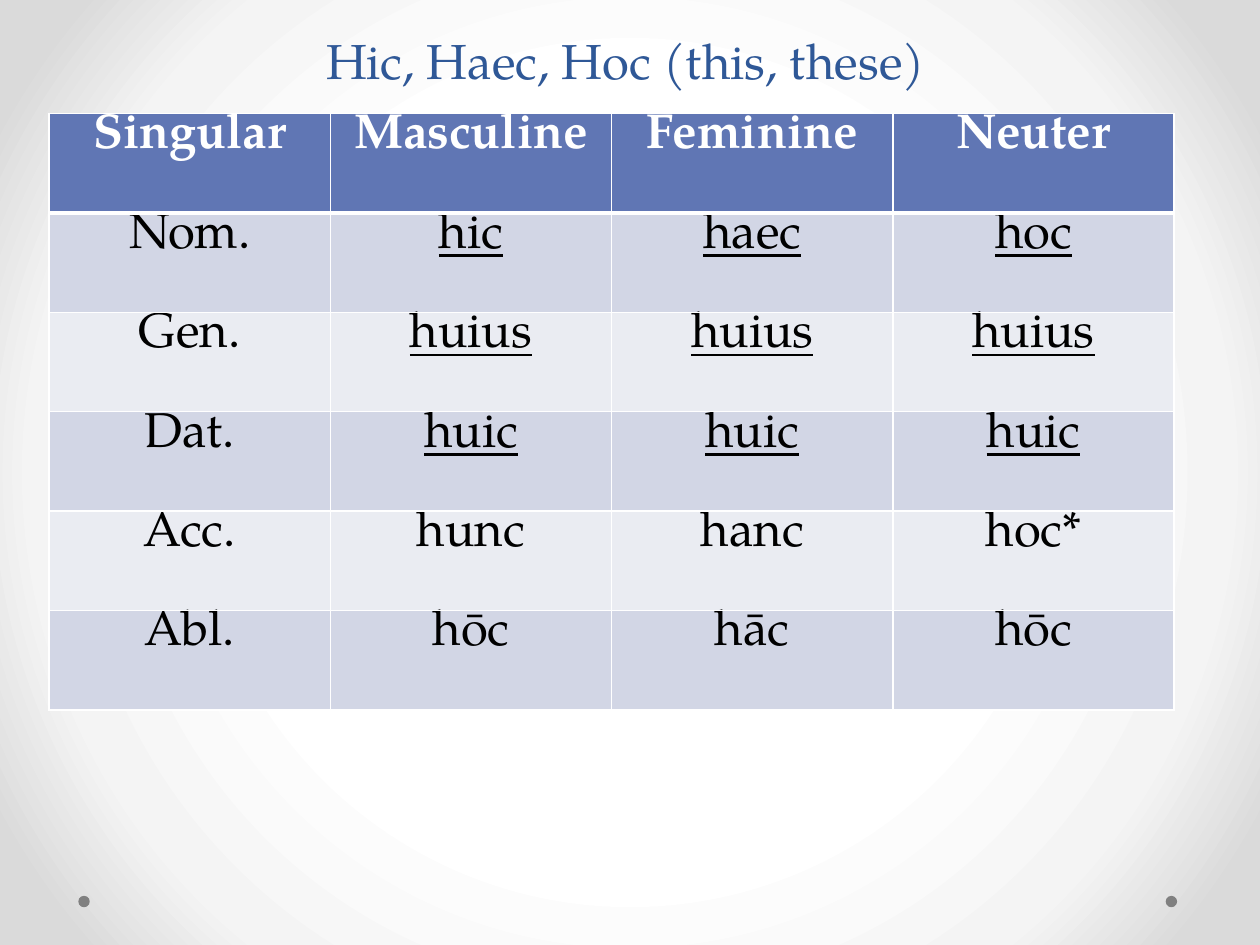
"""Build a slide declining the Latin demonstrative hic, haec, hoc in the singular."""
from lxml.etree import SubElement
from pptx import Presentation
from pptx.dml.color import RGBColor
from pptx.enum.shapes import MSO_SHAPE as Shape
from pptx.enum.text import MSO_ANCHOR as Anchor, PP_ALIGN as Align
from pptx.oxml.ns import qn
from pptx.util import Cm, Pt

FONT = "TeX Gyre Pagella"
TITLE_BLUE = RGBColor(0x2F, 0x58, 0x97)
HEADER_BLUE = RGBColor(0x60, 0x76, 0xB4)
BAND_DARK = RGBColor(0xD2, 0xD6, 0xE5)
BAND_LIGHT = RGBColor(0xEA, 0xEC, 0xF2)
GREY = RGBColor(0x80, 0x80, 0x80)
WHITE = RGBColor(0xFF, 0xFF, 0xFF)
BLACK = RGBColor(0, 0, 0)
BACKDROP = [(50, WHITE), (76, RGBColor(0xF4, 0xF4, 0xF4)), (92, RGBColor(0xDA, 0xDA, 0xDA))]
DECLENSION = [
    ("Singular", "Masculine", "Feminine", "Neuter"),
    ("Nom.", "hic", "haec", "hoc"),
    ("Gen.", "huius", "huius", "huius"),
    ("Dat.", "huic", "huic", "huic"),
    ("Acc.", "hunc", "hanc", "hoc*"),
    ("Abl.", "hōc", "hāc", "hōc"),
]
UNDERLINED_CASES = ("Nom.", "Gen.", "Dat.")


def write(frame, text, color):
    frame.text = text
    line = frame.paragraphs[0]
    line.alignment = Align.CENTER
    line.font.name = FONT
    line.font.size = Pt(28)
    line.font.color.rgb = color
    return line.font


def add_border(cell, side, width):
    border = SubElement(cell._tc.get_or_add_tcPr(), qn(f"a:ln{side}"), w=str(Pt(width)))
    paint = SubElement(border, qn("a:solidFill"))
    SubElement(paint, qn("a:srgbClr"), val=str(WHITE))


deck = Presentation()
deck.slide_width, deck.slide_height = Cm(25.4), Cm(19.05)
slide = deck.slides.add_slide(deck.slide_layouts[6])

backdrop = slide.background.fill
backdrop.gradient()
gradient = slide.background._cSld.find(".//" + qn("a:gradFill"))
for part in list(gradient):
    gradient.remove(part)
stops = SubElement(gradient, qn("a:gsLst"))
for position, color in BACKDROP:
    stop = SubElement(stops, qn("a:gs"), pos=str(position * 1000))
    SubElement(stop, qn("a:srgbClr"), val=str(color))
circle = SubElement(gradient, qn("a:path"), path="circle")
SubElement(circle, qn("a:fillToRect"), l="50000", t="50000", r="50000", b="50000")

for left in (23.5, 1.58):
    dot = slide.shapes.add_shape(Shape.OVAL, Cm(left), Cm(18.06), Cm(0.23), Cm(0.23))
    dot.shadow.inherit = False
    dot.fill.solid()
    dot.fill.fore_color.rgb = GREY
    dot.line.fill.background()

title = slide.shapes.add_textbox(Cm(4.67), Cm(-0.56), Cm(15.88), Cm(2.49)).text_frame
title.word_wrap = True
title.vertical_anchor = Anchor.BOTTOM
write(title, "Hic, Haec, Hoc (this, these)", TITLE_BLUE)

table = slide.shapes.add_table(
    len(DECLENSION), 4, Cm(0.99), Cm(2.29), Cm(22.68), Cm(12.02)).table
for row, forms in enumerate(DECLENSION):
    is_header = row == 0
    band = HEADER_BLUE if is_header else BAND_DARK if row % 2 else BAND_LIGHT
    for column, form in enumerate(forms):
        cell = table.cell(row, column)
        cell.margin_top = cell.margin_bottom = 0
        font = write(cell.text_frame, form, WHITE if is_header else BLACK)
        font.bold = is_header
        font.underline = column > 0 and forms[0] in UNDERLINED_CASES
        for side in "LRTB":
            thick = (is_header and side == "B") or (row == 1 and side == "T")
            add_border(cell, side, 3 if thick else 1)
        cell.fill.solid()
        cell.fill.fore_color.rgb = band

deck.save("out.pptx")
